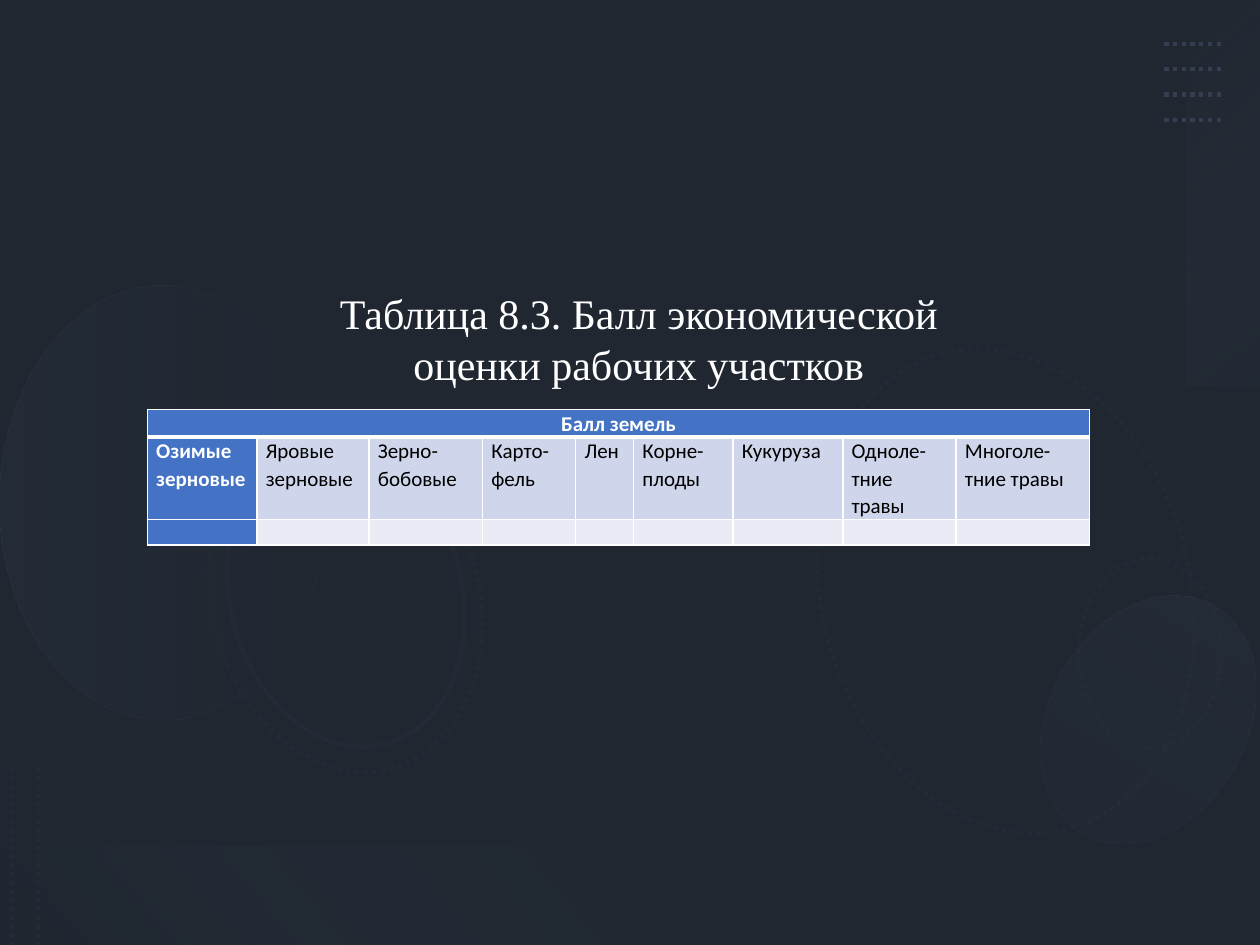
from dataclasses import dataclass

from lxml import etree
from pptx import Presentation
from pptx import util as u
from pptx.dml.color import RGBColor
from pptx.enum import dml, shapes, text
from pptx.oxml import ns

LEFT, CENTER = text.PP_ALIGN.LEFT, text.PP_ALIGN.CENTER


@dataclass(frozen=True)
class Theme:
    white: str = "FFFFFF"
    black: str = "000000"
    base: str = "44546A"
    navy: str = "222A35"
    steel: str = "333F50"
    mist: str = "ADB9CA"
    haze: str = "8497B0"
    accent: str = "4472C4"
    band: str = "CFD5EA"
    band_light: str = "E9EBF5"
    title_font: str = "Times New Roman"
    table_font: str = "Calibri"
    title_size: int = 24
    table_size: int = 12
    line_width: float = 2.5


def add_xml(parent, tag, **attributes):
    return etree.SubElement(parent, ns.qn(tag), attributes)


def add_color(parent, color, opacity=100):
    element = add_xml(parent, "a:srgbClr", val=color)
    if opacity < 100:
        add_xml(element, "a:alpha", val=str(opacity * 1000))


def write(frame, content, *, font, size, color, bold=False, align=LEFT, spacing=None):
    """Fill a text frame, one paragraph per line of content."""
    for index, line in enumerate(content.split("\n")):
        paragraph = frame.add_paragraph() if index else frame.paragraphs[0]
        paragraph.alignment = align
        if spacing:
            paragraph.line_spacing = spacing
        if not line:
            add_xml(paragraph._p, "a:endParaRPr", sz=str(size * 100))
            continue
        run = paragraph.add_run()
        run.text = line
        run.font.name, run.font.size, run.font.bold = font, u.Pt(size), bold
        run.font.color.rgb = RGBColor.from_string(color)


class SlideBuilder:
    def __init__(self, slide, theme):
        self.slide, self.theme = slide, theme

    def group(self):
        return self.slide.shapes.add_group_shape().shapes

    def stroke(self, line, color, dotted):
        line.color.rgb = RGBColor.from_string(color)
        line.width = u.Pt(self.theme.line_width)
        if dotted:
            line.dash_style = dml.MSO_LINE.ROUND_DOT

    def shape(self, kind, box, parent=None, rotation=0, fill=None, opacity=100,
              gradient=None, angle=90, line=None, dotted=True):
        """Gradient stops are (position, colour, opacity), all in percent."""
        parent = self.slide.shapes if parent is None else parent
        shape = parent.add_shape(kind, *map(u.Inches, box))
        shape.shadow.inherit = False
        shape.rotation = rotation
        shape.fill.background()
        properties = shape.element.spPr
        paint = properties.find(ns.qn("a:noFill"))
        if fill:
            solid = etree.Element(ns.qn("a:solidFill"))
            add_color(solid, fill, opacity)
            properties.replace(paint, solid)
        elif gradient:
            blend = etree.Element(ns.qn("a:gradFill"), rotWithShape="1")
            stops = add_xml(blend, "a:gsLst")
            for position, color, alpha in gradient:
                add_color(add_xml(stops, "a:gs", pos=str(position * 1000)), color, alpha)
            add_xml(blend, "a:lin", ang=str(angle * 60000), scaled="0")
            properties.replace(paint, blend)
        if line:
            self.stroke(shape.line, line, dotted)
        else:
            shape.line.fill.background()

    def dotted_line(self, parent, start, end, color):
        points = map(u.Inches, (*start, *end))
        connector = parent.add_connector(shapes.MSO_CONNECTOR.STRAIGHT, *points)
        self.stroke(connector.line, color, dotted=True)
        add_xml(connector.element.spPr, "a:effectLst")

    def cell(self, cell, content, fill, color, bold=False, align=LEFT, bottom=1):
        cell.margin_left = cell.margin_right = u.Inches(0.07)
        cell.margin_top = cell.margin_bottom = 0
        write(cell.text_frame, content, font=self.theme.table_font,
              size=self.theme.table_size, color=color, bold=bold, align=align, spacing=1.07)
        properties = cell._tc.get_or_add_tcPr()
        for side in ("L", "R", "T", "B"):
            width = bottom if side == "B" else 1
            border = add_xml(properties, f"a:ln{side}", w=str(u.Pt(width)))
            add_color(add_xml(border, "a:solidFill"), self.theme.white)
        cell.fill.solid()
        cell.fill.fore_color.rgb = RGBColor.from_string(fill)

    def table(self, left, top, widths, heights, heading, labels):
        theme = self.theme
        size = map(u.Inches, (left, top, sum(widths), sum(heights)))
        table = self.slide.shapes.add_table(len(heights), len(widths), *size).table
        for column, width in zip(table.columns, widths):
            column.width = u.Inches(width)
        for row, height in zip(table.rows, heights):
            row.height = u.Inches(height)
        table.cell(0, 0).merge(table.cell(0, len(widths) - 1))
        for index, label in enumerate(labels):
            first = index == 0
            self.cell(table.cell(0, index), heading if first else "", theme.accent,
                      theme.white, True, CENTER, bottom=3)
            color = theme.white if first else theme.black
            self.cell(table.cell(1, index), label,
                      theme.accent if first else theme.band, color, first)
            self.cell(table.cell(2, index), "",
                      theme.accent if first else theme.band_light, color)

    def title(self, content, box):
        title = self.slide.shapes.title
        title.left, title.top, title.width, title.height = map(u.Inches, box)
        frame = title.text_frame
        frame.word_wrap = False
        frame.auto_size = text.MSO_AUTO_SIZE.SHAPE_TO_FIT_TEXT
        frame.vertical_anchor = text.MSO_ANCHOR.MIDDLE
        write(frame, content, font=self.theme.title_font, size=self.theme.title_size,
              color=self.theme.white, align=CENTER)
        self.slide.shapes.element.append(title.element)  # bring to front


def draw_backdrop(builder):
    theme = builder.theme
    rectangle, oval = shapes.MSO_SHAPE.RECTANGLE, shapes.MSO_SHAPE.OVAL
    full = (0, 0, 10, 7.5)
    builder.shape(rectangle, full, fill=theme.base)
    builder.shape(rectangle, full, fill=theme.black, opacity=53)

    ovals = builder.group()
    for box, rotation, style in (
        ((6.03, 3.23, 3.9, 2.92), 75, {"line": theme.navy}),
        ((8.37, 4.62, 1.51, 1.13), 270, {"line": theme.navy}),
        ((-0.43, 2.7, 3.44, 2.58), 270,
         {"gradient": [(0, theme.steel, 20), (100, theme.navy, 10)]}),
        ((8.33, 4.67, 1.56, 2.08), 210,
         {"gradient": [(0, theme.steel, 10), (100, theme.steel, 20)]}),
        ((1.33, 3.68, 2.82, 2.12), 75, {"line": theme.navy}),
        ((1.52, 3.8, 2.45, 1.84), 75, {"line": theme.navy, "dotted": False}),
    ):
        builder.shape(oval, box, ovals, rotation, **style)

    builder.shape(rectangle, (8.18, 1.24, 3.06, 0.58), rotation=270, angle=140,
                  gradient=[(0, theme.mist, 0), (100, theme.steel, 10)])
    rows = builder.group()
    for index in range(4):
        y = 0.35 + 0.2 * index
        builder.dotted_line(rows, (9.24, y), (9.69, y), theme.steel)
    builder.shape(rectangle, (0, 6.72, 5, 0.78), rotation=180, angle=140,
                  gradient=[(10, theme.navy, 10), (100, theme.haze, 0)])
    columns = builder.group()
    for x in (0.3, 0.1):
        builder.dotted_line(columns, (x, 6.09), (x, 7.5), theme.navy)


def main():
    presentation = Presentation()
    presentation.slide_width, presentation.slide_height = u.Inches(10), u.Inches(7.5)
    slide = presentation.slides.add_slide(presentation.slide_layouts[5])
    builder = SlideBuilder(slide, Theme())
    draw_backdrop(builder)
    builder.table(
        1.17, 3.25, [0.87, 0.89, 0.9, 0.74, 0.46, 0.79, 0.87, 0.9, 1.06],
        [0.22, 0.65, 0.2], "Балл земель",
        ["Озимые зерновые", "Яровые зерновые", "Зерно-\nбобовые", "Карто-\nфель", "Лен",
         "Корне-\nплоды", "Кукуруза", "Одноле-\nтние\nтравы", "Многоле-\nтние травы"])
    builder.title("Таблица 8.3. Балл экономической\nоценки рабочих участков",
                  (2.53, 2.23, 5.08, 0.91))
    presentation.save("out.pptx")


if __name__ == "__main__":
    main()
